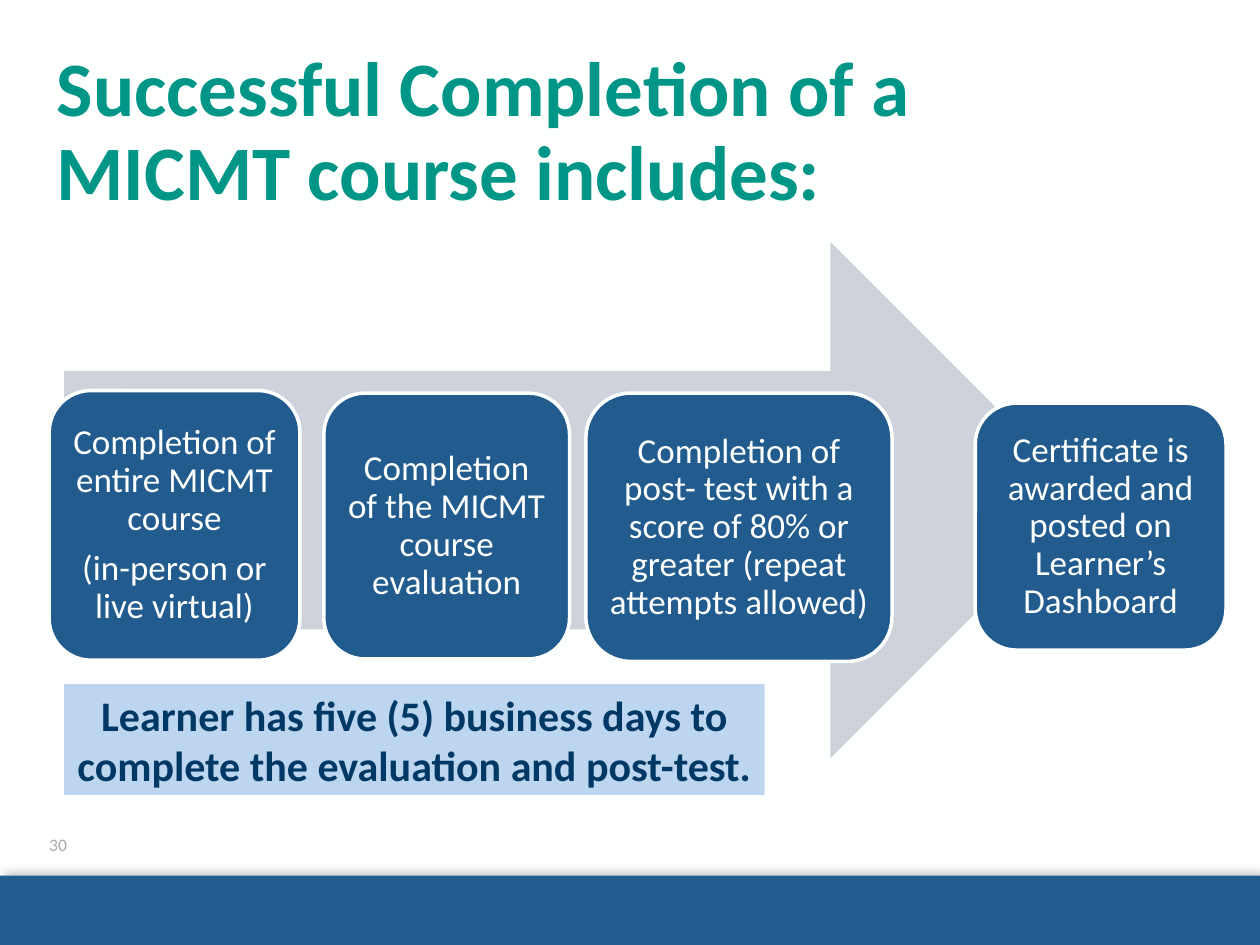
from lxml import etree
from pptx import Presentation
from pptx import util as u
from pptx.dml.color import RGBColor
from pptx.enum import shapes, text
from pptx.oxml import ns

WIDE, HIGH = u.Inches(10), u.Inches(7.5)
COLS, ROWS = 100, 75

WHITE = RGBColor(0xFE, 0xFF, 0xFF)
BLUE = RGBColor(0x22, 0x5B, 0x8D)
NAVY = RGBColor(0x00, 0x38, 0x65)
SKY = RGBColor(0xBB, 0xD6, 0xEE)
TEAL = RGBColor(0x00, 0x96, 0x87)
SILVER = RGBColor(0xCD, 0xD2, 0xDB)
GREY = RGBColor(0xA7, 0xA7, 0xA7)

KIND = shapes.MSO_SHAPE
MID = text.MSO_ANCHOR.MIDDLE
TOP = text.MSO_ANCHOR.TOP
LEFT = text.PP_ALIGN.LEFT
CENTER = text.PP_ALIGN.CENTER

HEAD = dict(size=44, bold=True, color=TEAL)
NOTE = dict(size=24, bold=True, color=NAVY)
STEP = dict(size=20, bold=False, color=WHITE)
PAGE = dict(size=10, bold=False, color=GREY)

STEPS = [
    ((3.9, 31, 19.9, 21.4),
     ["Completion of entire MICMT course", "(in-person or live virtual)"]),
    ((25.7, 31.2, 19.5, 21.1),
     ["Completion of the MICMT course evaluation"]),
    ((46.5, 31.2, 24.3, 21.3),
     ["Completion of post- test with a score of 80% or greater "
      "(repeat attempts allowed)"]),
    ((77.4, 32, 19.9, 19.6),
     ["Certificate is awarded and posted on Learner’s Dashboard"]),
]


def grid(left, top, cols, rows):
    return (int(WIDE * left / COLS), int(HIGH * top / ROWS),
            int(WIDE * cols / COLS), int(HIGH * rows / ROWS))


def assign(item, form):
    for name, value in form.items():
        setattr(item, name, value)


def write(shape, lines, look, align=CENTER, anchor=MID, pad=(0.07, 0.04),
          space=1.0, after=0):
    side, edge = (u.Inches(n) for n in pad)
    frame = shape.text_frame
    assign(frame, dict(
        word_wrap=True, auto_size=text.MSO_AUTO_SIZE.NONE,
        vertical_anchor=anchor, margin_left=side, margin_right=side,
        margin_top=edge, margin_bottom=edge))
    for i, line in enumerate(lines):
        para = frame.paragraphs[0] if i == 0 else frame.add_paragraph()
        assign(para, dict(
            alignment=align, line_spacing=space,
            space_before=u.Pt(0), space_after=u.Pt(after)))
        run = para.add_run()
        run.text = line
        assign(run.font, dict(
            name="Calibri", size=u.Pt(look["size"]), bold=look["bold"]))
        run.font.color.rgb = look["color"]


def block(slide, kind, cell, fill, line=None):
    shape = slide.shapes.add_shape(kind, *grid(*cell))
    shape.shadow.inherit = False
    shape.fill.solid()
    shape.fill.fore_color.rgb = fill
    if line is None:
        shape.line.fill.background()
    else:
        shape.line.color.rgb = line
        shape.line.width = u.Pt(2)
    return shape


def shade(shape):
    list_ = shape._element.spPr.find(ns.qn("a:effectLst"))
    cast = etree.SubElement(
        list_, ns.qn("a:outerShdw"), blurRad=str(u.Pt(6)),
        dist=str(u.Pt(3)), dir=str(315 * 60000), rotWithShape="0")
    color = etree.SubElement(cast, ns.qn("a:srgbClr"), val="000000")
    etree.SubElement(color, ns.qn("a:alpha"), val="24000")


def title(slide, cell, words):
    shape = slide.shapes.title
    names = ("left", "top", "width", "height")
    assign(shape, dict(zip(names, grid(*cell))))
    write(shape, [words], HEAD, LEFT, TOP, space=0.9)


def footer(slide, number):
    shade(block(slide, KIND.RECTANGLE, (0, 69.5, COLS, 5.5), BLUE))
    box = slide.shapes.add_textbox(*grid(2.5, 65, 4.2, 4))
    write(box, [number], PAGE, pad=(0, 0.05))


def step(slide, cell, lines):
    shape = block(slide, KIND.ROUNDED_RECTANGLE, cell, BLUE, WHITE)
    write(shape, lines, STEP, pad=(0.08, 0.08), space=0.9, after=7)


def main():
    deck = Presentation()
    assign(deck, dict(slide_width=WIDE, slide_height=HIGH))
    slide = deck.slides.add_slide(deck.slide_layouts[5])
    slide.background.fill.solid()
    slide.background.fill.fore_color.rgb = WHITE
    footer(slide, "30")
    title(slide, (3.8, 3.6, 87.2, 17.4),
          "Successful Completion of a MICMT course includes:")
    note = block(slide, KIND.RECTANGLE, (5.1, 54.3, 55.6, 8.8), SKY)
    write(note, ["Learner has five (5) business days to complete "
                 "the evaluation and post-test."], NOTE, anchor=TOP)
    block(slide, KIND.RIGHT_ARROW, (5.1, 19.2, 81.3, 41), SILVER)
    for cell, lines in STEPS:
        step(slide, cell, lines)
    deck.save("out.pptx")


if __name__ == "__main__":
    main()
